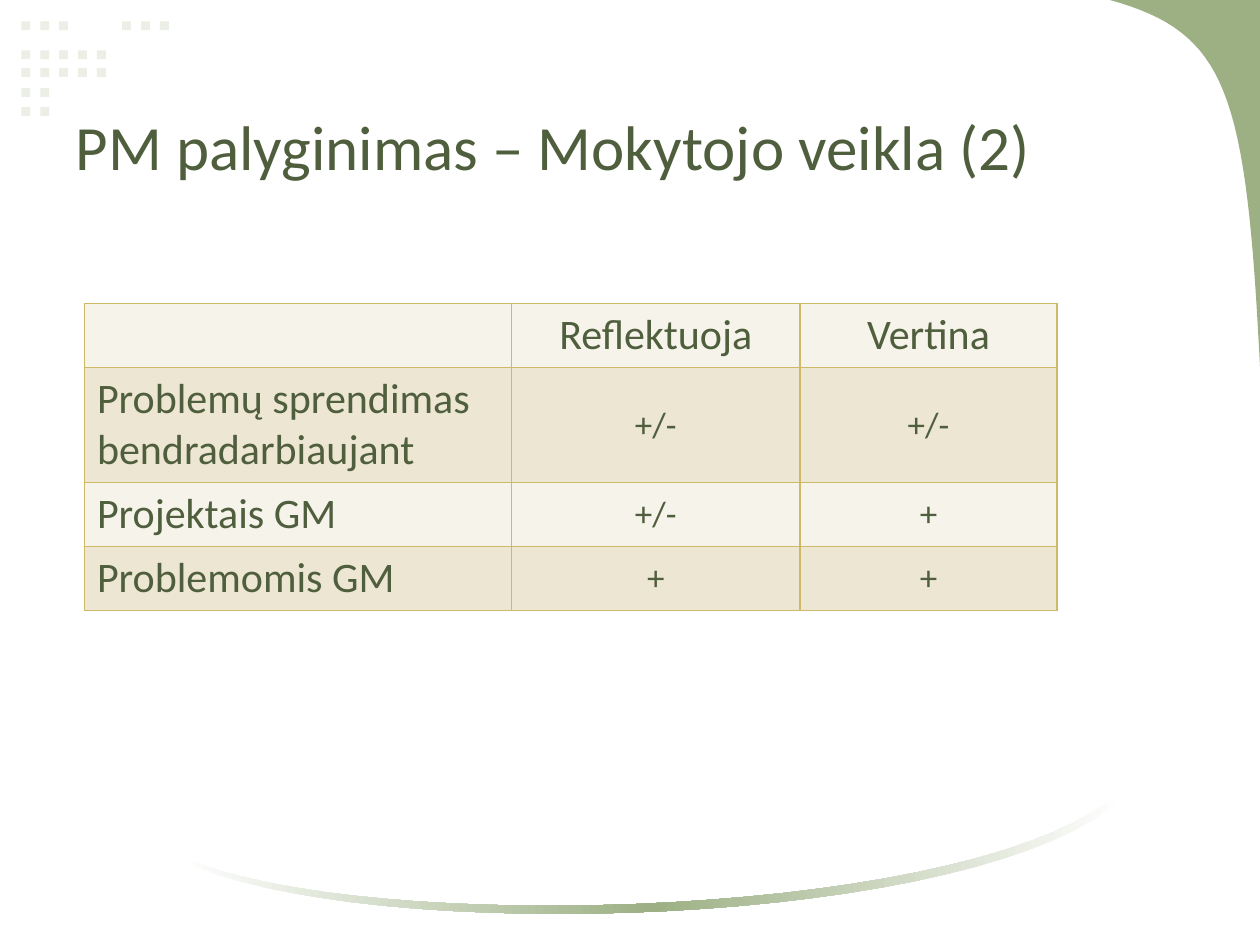
"""Build the teacher activity comparison slide."""
from dataclasses import dataclass
from typing import NamedTuple

from lxml.etree import SubElement
from pptx import Presentation
from pptx.dml.color import RGBColor as Rgb
from pptx.enum.shapes import MSO_SHAPE as Shape
from pptx.enum.text import MSO_ANCHOR as Anchor, MSO_AUTO_SIZE as AutoSize, PP_ALIGN as Align
from pptx.oxml import parse_xml
from pptx.oxml.ns import nsdecls, qn
from pptx.util import Inches, Pt


@dataclass(frozen=True)
class Theme:
    font: str = "Calibri"
    text: str = "4F5E3C"
    green: str = "9CB084"
    dot: str = "EBEFE6"
    paper: str = "FFFFFF"
    border: str = "CEB966"
    bands: tuple[str, str] = ("F6F3EA", "EDE6D3")
    title_size: int = 36
    label_size: int = 24
    mark_size: int = 20


class Point(NamedTuple):
    x: float
    y: float


class DotRow(NamedTuple):
    left: float
    top: float
    count: int


THEME = Theme()
GRID = Inches(1)
COLS, ROWS = 10, 7.5
DOT, DOT_STEP, CURVE_STEPS = 0.07, 0.15, 32
DOT_ROWS = [
    DotRow(0.17, 0.17, 3),
    DotRow(0.97, 0.17, 3),
    DotRow(0.17, 0.40, 5),
    DotRow(0.17, 0.54, 5),
    DotRow(0.17, 0.70, 2),
    DotRow(0.17, 0.85, 2),
]
CORNER = [Point(10, 2.91), Point(9.89, 0.72), Point(9.74, 0.26), Point(8.81, 0)]
ARC_LOWER = [Point(8.92, 6.32), Point(7.85, 7.37), Point(2.86, 7.53), Point(1.42, 6.82)]
ARC_UPPER = [Point(1.42, 6.79), Point(2.87, 7.46), Point(7.92, 7.29), Point(8.92, 6.25)]
COL_WIDTHS = [3.39, 2.29, 2.04]
ROW_HEIGHTS = [0.5, 0.9, 0.5, 0.5]
CELLS = [
    ["", "Reflektuoja", "Vertina"],
    ["Problemų sprendimas bendradarbiaujant", "+/-", "+/-"],
    ["Projektais GM", "+/-", "+"],
    ["Problemomis GM", "+", "+"],
]


def grid(n: float) -> int:
    return round(n * GRID)


def apply(target, values: dict) -> None:
    for name, value in values.items():
        setattr(target, name, value)


def write(tf, text: str, size: int, align: Align) -> None:
    p = tf.paragraphs[0]
    p.alignment = align
    font = p.font
    if text:
        r = p.add_run()
        r.text = text
        font = r.font
    apply(font, {"name": THEME.font, "size": Pt(size), "bold": False})
    font.color.rgb = Rgb.from_string(THEME.text)


def paint(sp, color: str) -> None:
    sp.shadow.inherit = False
    sp.fill.solid()
    sp.fill.fore_color.rgb = Rgb.from_string(color)
    sp.line.fill.background()


def draw_dots(s, row: DotRow) -> None:
    for i in range(row.count):
        left = row.left + i * DOT_STEP
        sp = s.shapes.add_shape(Shape.RECTANGLE, grid(left), grid(row.top), grid(DOT), grid(DOT))
        paint(sp, THEME.dot)


def bezier(ctrl: list[Point]) -> list[Point]:
    a, b, c, d = ctrl
    points = []
    for i in range(CURVE_STEPS + 1):
        t = i / CURVE_STEPS
        u = 1 - t
        weights = (u**3, 3 * u * u * t, 3 * u * t * t, t**3)
        points.append(Point(*(sum(w * v for w, v in zip(weights, axis)) for axis in zip(a, b, c, d))))
    return points


def draw_outline(s, points: list[Point]):
    first, *rest = [(grid(p.x), grid(p.y)) for p in points]
    fb = s.shapes.build_freeform(*first)
    fb.add_line_segments(rest, close=True)
    sp = fb.convert_to_shape()
    paint(sp, THEME.green)
    return sp


def fade_ends(sp) -> None:
    stops = zip((0, 50000, 100000), (THEME.paper, THEME.green, THEME.paper))
    gs = "".join(f'<a:gs pos="{pos}"><a:srgbClr val="{color}"/></a:gs>' for pos, color in stops)
    grad = parse_xml(f'<a:gradFill {nsdecls("a")}><a:gsLst>{gs}</a:gsLst><a:lin ang="0"/></a:gradFill>')
    sp_pr = sp.fill._xPr
    sp_pr.replace(sp_pr.find(qn("a:solidFill")), grad)


def add_borders(cell) -> None:
    tc_pr = cell._tc.get_or_add_tcPr()
    for i, side in enumerate("LRTB"):
        ln = SubElement(tc_pr, qn(f"a:ln{side}"), w=str(Pt(1)))
        SubElement(SubElement(ln, qn("a:solidFill")), qn("a:srgbClr"), val=THEME.border)
        tc_pr.insert(i, ln)


def draw_table(s, left: float, top: float) -> None:
    size = grid(sum(COL_WIDTHS)), grid(sum(ROW_HEIGHTS))
    table = s.shapes.add_table(len(CELLS), len(COL_WIDTHS), grid(left), grid(top), *size).table
    apply(table, {"first_row": False, "horz_banding": False})
    for column, width in zip(table.columns, COL_WIDTHS):
        column.width = grid(width)
    for i, (row, height) in enumerate(zip(table.rows, ROW_HEIGHTS)):
        row.height = grid(height)
        for j, (cell, text) in enumerate(zip(row.cells, CELLS[i])):
            is_mark = i > 0 and j > 0
            cell.vertical_anchor = Anchor.MIDDLE if is_mark else Anchor.TOP
            cell.fill.solid()
            cell.fill.fore_color.rgb = Rgb.from_string(THEME.bands[i % 2])
            add_borders(cell)
            write(cell.text_frame, text, THEME.mark_size if is_mark else THEME.label_size,
                  Align.CENTER if j else Align.LEFT)


def draw_title(s, text: str) -> None:
    sp = s.shapes.title
    apply(sp, {"left": grid(0.5), "top": grid(0.3), "width": grid(9.35), "height": grid(1.25)})
    tf = sp.text_frame
    sides = ("left", "top", "right", "bottom")
    apply(tf, {f"margin_{side}": grid(0.1) for side in sides})
    apply(tf, {"word_wrap": True, "auto_size": AutoSize.NONE, "vertical_anchor": Anchor.BOTTOM})
    write(tf, text, THEME.title_size, Align.LEFT)


def main() -> None:
    prs = Presentation()
    apply(prs, {"slide_width": grid(COLS), "slide_height": grid(ROWS)})
    s = prs.slides.add_slide(prs.slide_layouts[5])
    for row in DOT_ROWS:
        draw_dots(s, row)
    draw_outline(s, [Point(COLS, 0), *bezier(CORNER)])
    fade_ends(draw_outline(s, bezier(ARC_LOWER) + bezier(ARC_UPPER)))
    draw_title(s, "PM palyginimas – Mokytojo veikla (2)")
    draw_table(s, 0.67, 2.41)
    prs.save("out.pptx")


if __name__ == "__main__":
    main()
